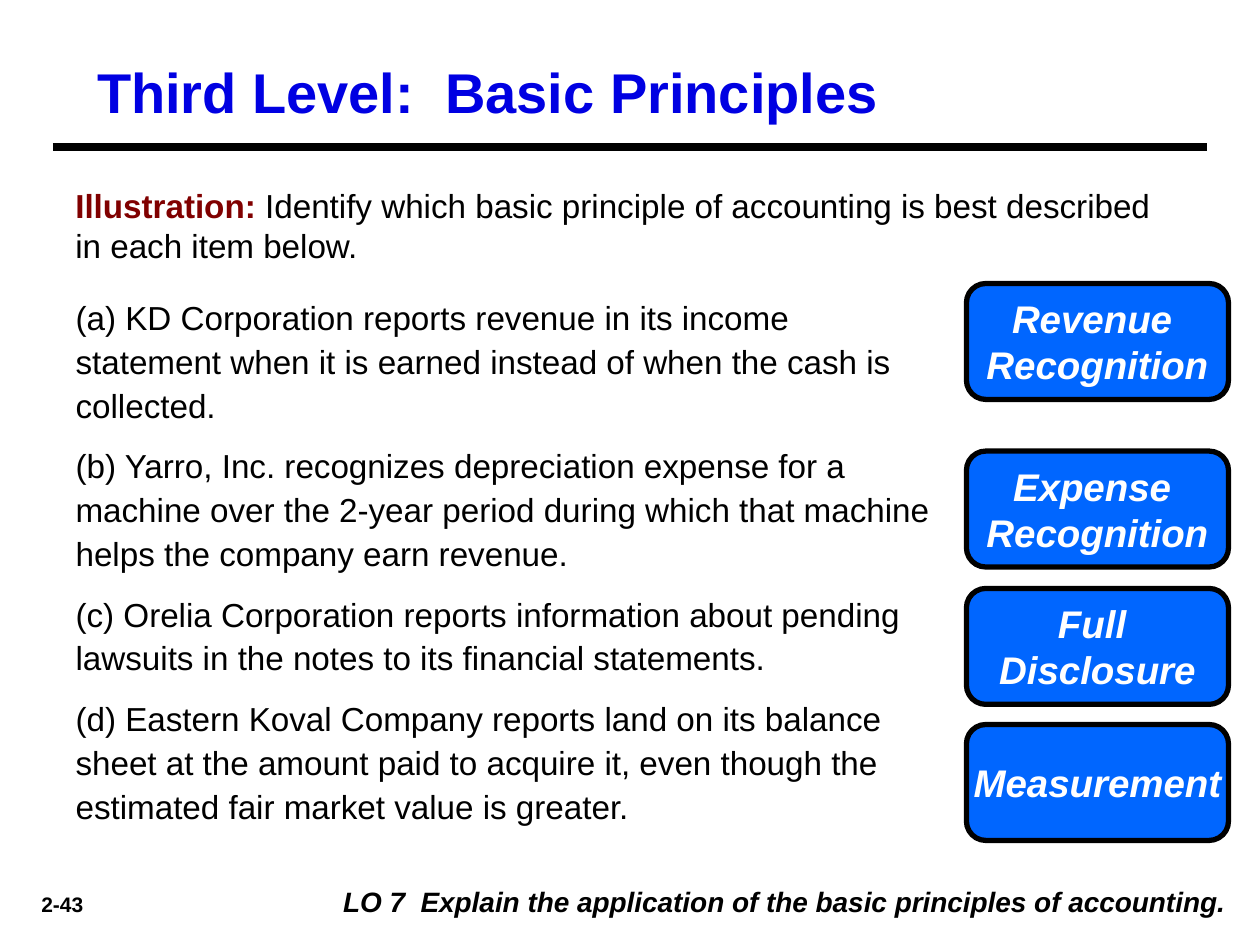
from dataclasses import dataclass
from lxml.etree import SubElement
from pptx import Presentation
from pptx.dml.color import RGBColor
from pptx.enum.shapes import MSO_CONNECTOR, MSO_SHAPE
from pptx.enum.text import MSO_ANCHOR, MSO_AUTO_SIZE, PP_ALIGN
from pptx.oxml.ns import qn
from pptx.util import Inches, Pt


@dataclass(frozen=True)
class Theme:
    font: str = "Arial"
    ink: str = "000000"
    paper: str = "FFFFFF"
    title: str = "0000E2"
    accent: str = "800000"
    button: str = "0066FF"
    title_size: int = 32
    label_size: int = 22
    body_size: int = 19
    goal_size: int = 16
    page_size: int = 12


THEME = Theme()
LEFT, BUTTON_LEFT = 0.5, 7.67
BUTTON_WIDTH, BUTTON_HEIGHT = 2.08, 0.92

ITEMS = [
    "(a) KD Corporation reports revenue in its income statement when it is "
    "earned instead of when the cash is collected.",
    "(b) Yarro, Inc. recognizes depreciation expense for a machine over the "
    "2-year period during which that machine helps the company earn revenue.",
    "(c) Orelia Corporation reports information about pending lawsuits in the "
    "notes to its financial statements.",
    "(d) Eastern Koval Company reports land on its balance sheet at the amount "
    "paid to acquire it, even though the estimated fair market value is greater.",
]
ANSWERS = [
    (2.25, "Revenue \nRecognition"),
    (3.58, "Expense \nRecognition"),
    (4.67, "Full \nDisclosure"),
    (5.75, "Measurement"),
]


def color(code):
    return RGBColor.from_string(code)


def style(frame, size, ink=THEME.ink, bold=False, italic=False,
          align=PP_ALIGN.LEFT):
    for para in frame.paragraphs:
        para.alignment = align
        for run in para.runs:
            font = run.font
            font.name, font.size = THEME.font, Pt(size)
            font.bold, font.italic = bold, italic
            font.color.rgb = color(ink)


def place(shape, left, top, width, height):
    shape.left, shape.top = Inches(left), Inches(top)
    shape.width, shape.height = Inches(width), Inches(height)


def add_text(slide, box, text, size, **look):
    shape = slide.shapes.add_textbox(*map(Inches, box))
    frame = shape.text_frame
    frame.word_wrap = True
    frame.text = text
    style(frame, size, **look)
    return shape


def fill_title(slide, text):
    title = slide.shapes.title
    place(title, 0.67, 0.42, 9, 0.61)
    frame = title.text_frame
    frame.text = text
    frame.auto_size = MSO_AUTO_SIZE.NONE
    frame.vertical_anchor = MSO_ANCHOR.MIDDLE
    style(frame, THEME.title_size, THEME.title, bold=True)


def add_rule(slide, y):
    rule = slide.shapes.add_connector(
        MSO_CONNECTOR.STRAIGHT, *map(Inches, (0.42, y, 9.58, y)))
    rule.line.color.rgb = color(THEME.ink)
    rule.line.width = Pt(4.5)
    SubElement(rule._element.spPr, qn("a:effectLst"))


def add_intro(slide, lead, rest):
    shape = add_text(slide, (LEFT, 1.42, 9, 0.74), lead, THEME.body_size)
    para = shape.text_frame.paragraphs[0]
    para.add_run().text = rest
    style(shape.text_frame, THEME.body_size)
    head = para.runs[0].font
    head.bold = True
    head.color.rgb = color(THEME.accent)


def fill_items(slide, items):
    body = slide.placeholders[1]
    place(body, LEFT, 2.28, 7, 4.42)
    frame = body.text_frame
    frame.text = "\n".join(items)
    frame.auto_size = MSO_AUTO_SIZE.NONE
    style(frame, THEME.body_size)
    for row, para in enumerate(frame.paragraphs):
        para.line_spacing = 1.1
        para.space_before = Pt(THEME.body_size / 2 if row else 0)
        props = para._p.get_or_add_pPr()
        props.set("marL", "0")
        props.set("indent", "0")
        SubElement(props, qn("a:buNone"))


def add_button(slide, top, text):
    box = (BUTTON_LEFT, top, BUTTON_WIDTH, BUTTON_HEIGHT)
    shape = slide.shapes.add_shape(
        MSO_SHAPE.FLOWCHART_ALTERNATE_PROCESS, *map(Inches, box))
    shape.shadow.inherit = False
    shape.fill.solid()
    shape.fill.fore_color.rgb = color(THEME.button)
    shape.line.color.rgb = color(THEME.ink)
    shape.line.width = Pt(3)
    frame = shape.text_frame
    frame.word_wrap = False
    frame.vertical_anchor = MSO_ANCHOR.MIDDLE
    frame.text = text
    style(frame, THEME.label_size, THEME.paper, bold=True, italic=True,
          align=PP_ALIGN.CENTER)


def add_footer(slide, page, goal):
    add_text(slide, (0.08, 7.03, 0.83, 0.3), page, THEME.page_size,
             bold=True, align=PP_ALIGN.CENTER)
    shape = add_text(slide, (1.33, 6.97, 8.5, 0.37), goal, THEME.goal_size,
                     bold=True, italic=True, align=PP_ALIGN.RIGHT)
    shape.fill.solid()
    shape.fill.fore_color.rgb = color(THEME.paper)


def main():
    deck = Presentation()
    deck.slide_width, deck.slide_height = Inches(10), Inches(7.5)
    slide = deck.slides.add_slide(deck.slide_layouts[1])
    fill_title(slide, "Third Level:  Basic Principles")
    add_rule(slide, 1.17)
    add_intro(slide, "Illustration:", " Identify which basic principle of "
              "accounting is best described in each item below.")
    fill_items(slide, ITEMS)
    for top, text in ANSWERS:
        add_button(slide, top, text)
    add_footer(slide, "2-43", "LO 7  Explain the application of the basic "
               "principles of accounting.")
    deck.save("out.pptx")


if __name__ == "__main__":
    main()
